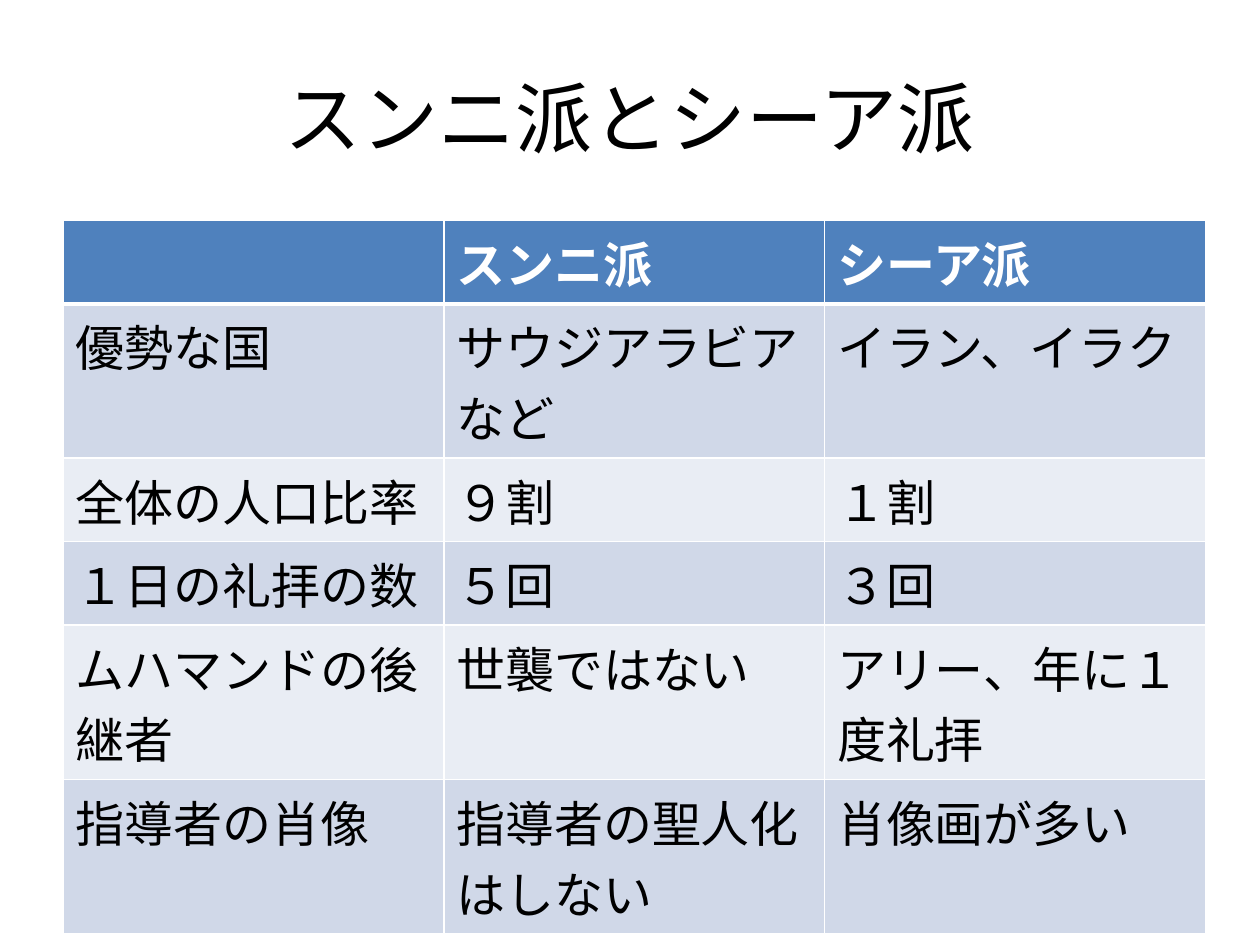
from lxml import etree
from pptx import Presentation
from pptx.dml.color import RGBColor
from pptx.enum import text
from pptx.oxml import ns
from pptx.util import Pt

COLORS = {
    "header": "4F81BD",
    "odd_row": "D0D8E8",
    "even_row": "E9EDF4",
    "white": "FFFFFF",
    "black": "000000",
}
FONT = "Calibri"
ROWS = [
    ["", "スンニ派", "シーア派"],
    ["優勢な国", "サウジアラビアなど", "イラン、イラク"],
    ["全体の人口比率", "９割", "１割"],
    ["１日の礼拝の数", "５回", "３回"],
    ["ムハマンドの後継者", "世襲ではない", "アリー、年に１度礼拝"],
    ["指導者の肖像", "指導者の聖人化はしない", "肖像画が多い"],
]


def write_text(frame, content, size=28, color="black", bold=False, align=None):
    paragraph = frame.paragraphs[0]
    paragraph.text = content
    paragraph.alignment = align
    paragraph.font.size = Pt(size)
    for run in paragraph.runs:
        run.font.name = FONT
        run.font.size = Pt(size)
        run.font.bold = bold
        run.font.color.rgb = RGBColor.from_string(COLORS[color])


def set_borders(cell, widths):
    """Draw white cell borders; widths maps L, R, T, B to points."""
    properties = cell._tc.get_or_add_tcPr()
    for index, side in enumerate("LRTB"):
        line = etree.Element(ns.qn(f"a:ln{side}"), w=str(Pt(widths[side])))
        fill = etree.SubElement(line, ns.qn("a:solidFill"))
        etree.SubElement(fill, ns.qn("a:srgbClr"), val=COLORS["white"])
        properties.insert(index, line)


def place_title(slide, left, top, width, height):
    title = slide.shapes.title
    title.left, title.top = Pt(left), Pt(top)
    title.width, title.height = Pt(width), Pt(height)
    title.text_frame.vertical_anchor = text.MSO_ANCHOR.MIDDLE
    write_text(title.text_frame, "スンニ派とシーア派", size=44,
               align=text.PP_ALIGN.CENTER)


def place_comparison(slide, left, top, width, row_height):
    table = slide.shapes.add_table(
        len(ROWS), len(ROWS[0]), Pt(left), Pt(top), Pt(width),
        Pt(row_height * len(ROWS))).table
    for column in table.columns:
        column.width = Pt(width / len(ROWS[0]))
    for row_index, row in enumerate(ROWS):
        table.rows[row_index].height = Pt(row_height)
        header = row_index == 0
        fill = "header" if header else ("even_row", "odd_row")[row_index % 2]
        # A thick line separates the header from the first body row
        widths = {"L": 1, "R": 1, "T": 3 if row_index == 1 else 1,
                  "B": 3 if header else 1}
        for column_index, content in enumerate(row):
            cell = table.cell(row_index, column_index)
            cell.fill.solid()
            cell.fill.fore_color.rgb = RGBColor.from_string(COLORS[fill])
            set_borders(cell, widths)
            write_text(cell.text_frame, content, bold=header,
                       color="white" if header else "black")


def main():
    presentation = Presentation()
    presentation.slide_width, presentation.slide_height = Pt(720), Pt(540)
    slide = presentation.slides.add_slide(presentation.slide_layouts[5])
    place_title(slide, left=36, top=21.6, width=648, height=90)
    place_comparison(slide, left=36, top=126, width=652.8, row_height=42.5)
    presentation.save("out.pptx")


if __name__ == "__main__":
    main()
